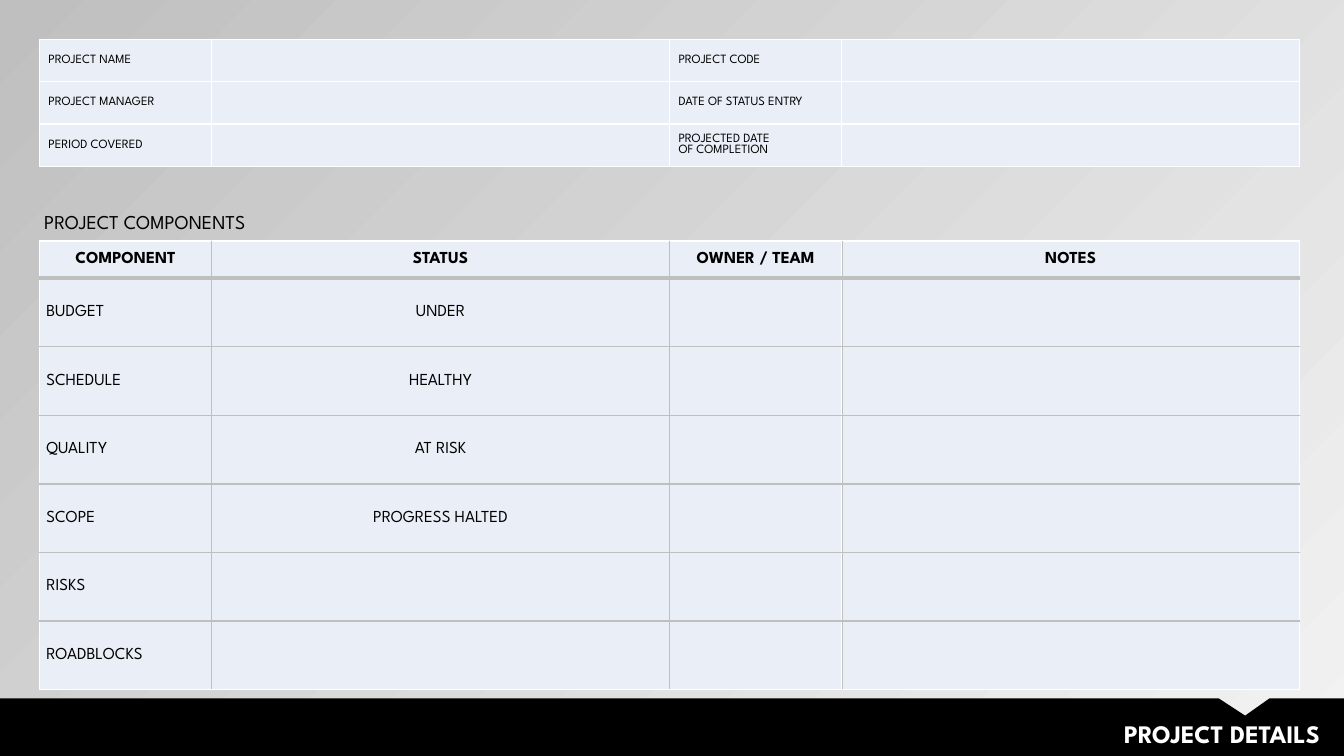
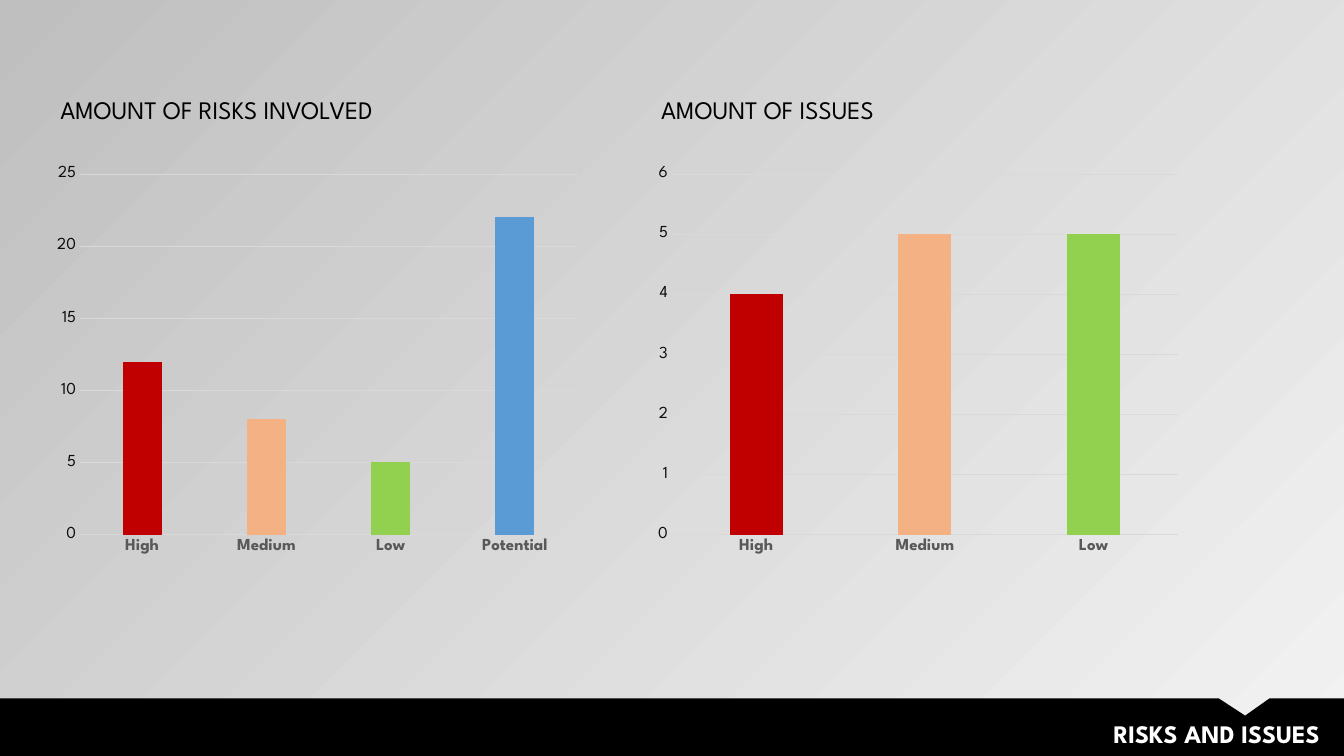
from itertools import accumulate
from typing import Any, NamedTuple

from pptx import Presentation
from pptx.chart.data import CategoryChartData
from pptx.dml.color import RGBColor
from pptx.enum.chart import XL_CHART_TYPE as ChartType, XL_TICK_MARK as Tick
from pptx.enum.shapes import MSO_CONNECTOR as Connector
from pptx.enum.text import MSO_ANCHOR as Anchor, MSO_AUTO_SIZE as AutoSize, PP_ALIGN as Align
from pptx.oxml import parse_xml
from pptx.oxml.ns import nsdecls
from pptx.util import Inches, Pt

FONT = "League Spartan"
COLORS = {
    "light": "F2F2F2", "gray": "BFBFBF", "cell": "EAEFF7", "white": "FFFFFF",
    "black": "000000", "label": "595959", "value": "0D0D0D", "grid": "D9D9D9",
    "high": "C00000", "medium": "F4B183", "low": "92D050", "potential": "5B9BD5",
}
SLIDE_WIDTH, SLIDE_HEIGHT = 13.33, 7.5
BAND_TOP = 6.93
COLUMNS = [1.71, 4.54, 1.71, 4.54]
TABLE_LEFT = 0.39


class TextStyle(NamedTuple):
    size: float
    color: str = "black"
    bold: bool = False
    align: Align = Align.LEFT


class CellText(NamedTuple):
    text: str
    style: TextStyle
    indent: float = 0


class Grid(NamedTuple):
    top: float
    row_heights: list[float]
    rows: list[list[CellText]]


class Line(NamedTuple):
    x1: float
    y1: float
    x2: float
    y2: float
    width: float


class Columns(NamedTuple):
    title: str
    left: float
    values: dict[str, int]
    maximum: int
    step: int


BAND_TITLE = TextStyle(18, "white", True, Align.RIGHT)
SECTION = TextStyle(14)
CHART_TITLE = TextStyle(18)
FORM_LABEL = TextStyle(9)
HEADER = TextStyle(12, bold=True, align=Align.CENTER)
COMPONENT = TextStyle(12)
STATUS = TextStyle(12, align=Align.CENTER)


def rgb(name: str) -> RGBColor:
    return RGBColor.from_string(COLORS[name])


def set_values(target: Any, values: dict[str, Any]) -> None:
    for name, value in values.items():
        setattr(target, name, value)


def set_font(font: Any, style: TextStyle) -> None:
    set_values(font, {"name": FONT, "size": Pt(style.size), "bold": style.bold})
    font.color.rgb = rgb(style.color)


def write(frame: Any, text: str, style: TextStyle) -> None:
    para = frame.paragraphs[0]
    para.alignment = style.align
    for number, line in enumerate(text.split("\n")):
        if number:
            para.add_line_break()
        span = para.add_run()
        span.text = line
        set_font(span.font, style)


def add_text(page: Any, text: str, style: TextStyle, left: float, top: float,
             width: float, height: float) -> None:
    box = page.shapes.add_textbox(Inches(left), Inches(top), Inches(width), Inches(height))
    set_values(box.text_frame, {"word_wrap": True, "auto_size": AutoSize.SHAPE_TO_FIT_TEXT})
    write(box.text_frame, text, style)


def add_page(deck: Any) -> Any:
    page = deck.slides.add_slide(deck.slide_layouts[6])
    fill = page.background.fill
    fill.gradient()
    fill.gradient_angle = 135
    for stop, name in zip(fill.gradient_stops, ("light", "gray")):
        stop.color.rgb = rgb(name)
    return page


def add_band(page: Any, title: str) -> None:
    """Black footer with a notch and the slide title."""
    outline = [(12.09, BAND_TOP), (12.35, 7.1), (12.59, BAND_TOP), (SLIDE_WIDTH, BAND_TOP),
               (SLIDE_WIDTH, SLIDE_HEIGHT), (0, SLIDE_HEIGHT)]
    builder = page.shapes.build_freeform(Inches(0), Inches(BAND_TOP))
    builder.add_line_segments([(Inches(x), Inches(y)) for x, y in outline], close=True)
    band = builder.convert_to_shape()
    band.shadow.inherit = False
    band.fill.solid()
    band.fill.fore_color.rgb = rgb("black")
    band.line.fill.background()
    add_text(page, title, BAND_TITLE, 4.14, 7.08, 9.05, 0.4)


def format_cell(cell: Any) -> None:
    set_values(cell, {"vertical_anchor": Anchor.MIDDLE, "margin_left": 0, "margin_right": 0,
                      "margin_top": 0, "margin_bottom": 0})
    cell.fill.solid()
    cell.fill.fore_color.rgb = rgb("cell")
    properties = cell._tc.get_or_add_tcPr()
    for place, side in enumerate(("lnL", "lnR", "lnT", "lnB")):
        properties.insert(place, parse_xml(
            f'<a:{side} {nsdecls("a")} w="{Pt(1)}"><a:solidFill>'
            f'<a:srgbClr val="{COLORS["white"]}"/></a:solidFill></a:{side}>'))


def add_grid(page: Any, grid: Grid) -> None:
    table = page.shapes.add_table(
        len(grid.rows), len(COLUMNS), Inches(TABLE_LEFT), Inches(grid.top),
        Inches(sum(COLUMNS)), Inches(sum(grid.row_heights))).table
    set_values(table, {"first_row": False, "horz_banding": False})
    for column, width in zip(table.columns, COLUMNS):
        column.width = Inches(width)
    for row, height, entries in zip(table.rows, grid.row_heights, grid.rows):
        row.height = Inches(height)
        for cell, entry in zip(row.cells, entries):
            format_cell(cell)
            if entry.text:
                cell.margin_left = Inches(entry.indent)
                write(cell.text_frame, entry.text, entry.style)


def add_line(page: Any, line: Line) -> None:
    rule = page.shapes.add_connector(Connector.STRAIGHT, Inches(line.x1), Inches(line.y1),
                                     Inches(line.x2), Inches(line.y2))
    rule.line.color.rgb = rgb("gray")
    rule.line.width = Pt(line.width)
    rule._element.spPr.append(parse_xml(f'<a:effectLst {nsdecls("a")}/>'))


def add_columns(page: Any, columns: Columns) -> None:
    data = CategoryChartData()
    data.categories = list(columns.values)
    data.add_series("Series 1", list(columns.values.values()))
    chart = page.shapes.add_chart(
        ChartType.COLUMN_CLUSTERED, Inches(columns.left), Inches(1.57),
        Inches(5.37), Inches(4.01), data).chart
    set_values(chart, {"has_title": False, "has_legend": False})
    set_font(chart.font, TextStyle(10))

    # Axes and gridlines
    axes = ((chart.category_axis, TextStyle(12, "label", True)),
            (chart.value_axis, TextStyle(12, "value")))
    for axis, style in axes:
        set_values(axis, {"major_tick_mark": Tick.NONE, "minor_tick_mark": Tick.NONE})
        set_font(axis.tick_labels.font, style)
    set_values(chart.value_axis, {"minimum_scale": 0, "maximum_scale": columns.maximum,
                                  "major_unit": columns.step, "has_major_gridlines": True})
    chart.value_axis.format.line.fill.background()
    for line in (chart.category_axis.format.line, chart.value_axis.major_gridlines.format.line):
        line.color.rgb = rgb("grid")
        line.width = Pt(0.75)

    # Bars take the colour of their category
    plot = chart.plots[0]
    set_values(plot, {"gap_width": 219, "overlap": -5, "vary_by_categories": False})
    series = plot.series[0]
    series.format.fill.solid()
    series.format.fill.fore_color.rgb = rgb("potential")
    for number, category in enumerate(columns.values):
        fill = series.points[number].format.fill
        fill.solid()
        fill.fore_color.rgb = rgb(category.lower())
    add_text(page, columns.title, CHART_TITLE, columns.left + 0.04, 0.89, 4.44, 0.4)


def build_details(deck: Any) -> None:
    page = add_page(deck)
    empty = CellText("", COMPONENT)

    # Project facts
    facts = [("PROJECT NAME", "PROJECT CODE"),
             ("PROJECT MANAGER", "DATE OF STATUS ENTRY"),
             ("PERIOD COVERED", "PROJECTED DATE \nOF COMPLETION")]
    fact_rows = [[CellText(left, FORM_LABEL, 0.09), empty,
                  CellText(right, FORM_LABEL, 0.09), empty] for left, right in facts]
    add_grid(page, Grid(0.39, [0.42] * len(facts), fact_rows))

    # Project components
    headers = ("COMPONENT", "STATUS", "OWNER / TEAM", "NOTES")
    components = {"BUDGET": "UNDER", "SCHEDULE": "HEALTHY", "QUALITY": "AT RISK",
                  "SCOPE": "PROGRESS HALTED", "RISKS": "", "ROADBLOCKS": ""}
    rows = [[CellText(text, HEADER) for text in headers]]
    rows += [[CellText(name, COMPONENT, 0.07), CellText(status, STATUS), empty, empty]
             for name, status in components.items()]
    grid = Grid(2.39, [0.37] + [0.68] * len(components), rows)
    add_grid(page, grid)
    add_text(page, "PROJECT COMPONENTS", SECTION, 0.34, 2.03, 3.65, 0.34)

    # Rules between rows and columns
    right = TABLE_LEFT + sum(COLUMNS)
    bottom = grid.top + sum(grid.row_heights)
    for number, offset in enumerate(accumulate(grid.row_heights[:-1])):
        y = grid.top + offset
        add_line(page, Line(TABLE_LEFT, y, right, y, 1 if number else 2.5))
    for offset in accumulate(COLUMNS[:-1]):
        x = TABLE_LEFT + offset
        add_line(page, Line(x, grid.top, x, bottom, 0.5))
    add_band(page, "PROJECT DETAILS")


def build_risks(deck: Any) -> None:
    page = add_page(deck)
    for columns in (
        Columns("AMOUNT OF RISKS INVOLVED", 0.46,
                {"High": 12, "Medium": 8, "Low": 5, "Potential": 22}, 25, 5),
        Columns("AMOUNT OF ISSUES", 6.42, {"High": 4, "Medium": 5, "Low": 5}, 6, 1),
    ):
        add_columns(page, columns)
    add_band(page, "RISKS AND ISSUES")


def main() -> None:
    deck = Presentation()
    set_values(deck, {"slide_width": Inches(SLIDE_WIDTH), "slide_height": Inches(SLIDE_HEIGHT)})
    build_details(deck)
    build_risks(deck)
    deck.save("out.pptx")


if __name__ == "__main__":
    main()
